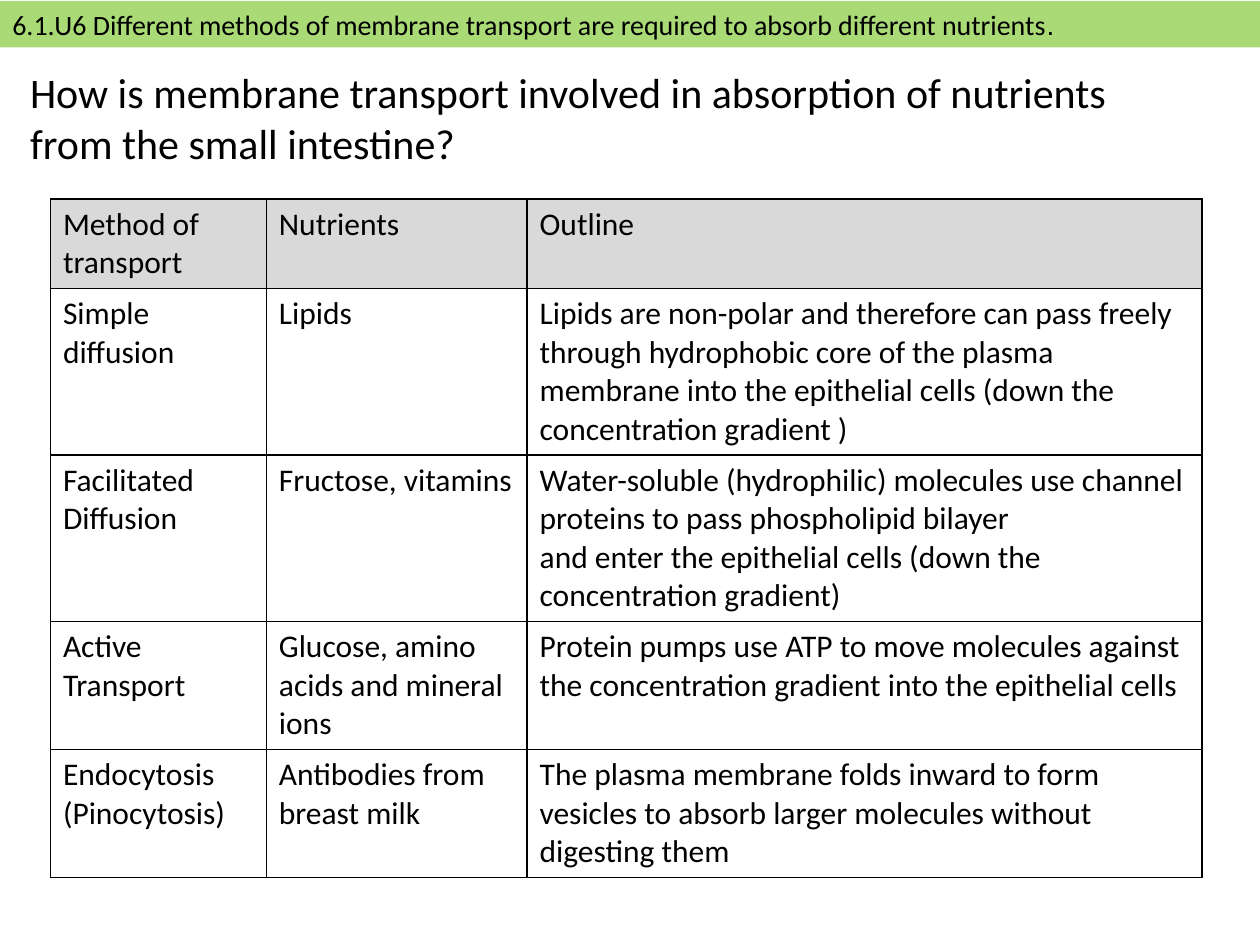
from lxml import etree
from pptx import Presentation
from pptx.dml.color import RGBColor
from pptx.enum import shapes, text
from pptx.oxml import ns
from pptx.util import Pt

STANDARD = ("6.1.U6 Different methods of membrane transport are required "
            "to absorb different nutrients")
QUESTION = "How is membrane transport involved in absorption of nutrients from the small intestine?"
TRANSPORT_ROWS = [
    ("Method of transport", "Nutrients", "Outline"),
    ("Simple diffusion", "Lipids",
     "Lipids are non-polar and therefore can pass freely through hydrophobic core of the "
     "plasma membrane into the epithelial cells (down the concentration gradient )"),
    ("Facilitated Diffusion", "Fructose, vitamins",
     "Water-soluble (hydrophilic) molecules use channel proteins to pass phospholipid bilayer\n"
     "and enter the epithelial cells (down the concentration gradient)"),
    ("Active Transport", "Glucose, amino acids and mineral ions",
     "Protein pumps use ATP to move molecules against the concentration gradient "
     "into the epithelial cells"),
    ("Endocytosis (Pinocytosis)", "Antibodies from breast milk",
     "The plasma membrane folds inward to form vesicles to absorb larger molecules "
     "without digesting them"),
]
COLUMN_WIDTHS = (123.4, 149, 385.7)
ROW_HEIGHTS = (51.2, 95, 95, 73.2, 73.2)
COLORS = {"band": "92D050", "header": "D9D9D9", "cell": "FFFFFF", "ink": "000000"}


def color(name):
    return RGBColor.from_string(COLORS[name])


def format_font(font, size, name="Calibri"):
    font.size, font.name = Pt(size), name
    font.color.rgb = color("ink")


def add_borders(cell):
    """Draw a 1 pt line on every side; borders must precede the cell fill."""
    properties = cell._tc.get_or_add_tcPr()
    for side in ("lnL", "lnR", "lnT", "lnB"):
        line = etree.SubElement(properties, ns.qn(f"a:{side}"), w=str(Pt(1)))
        fill = etree.SubElement(line, ns.qn("a:solidFill"))
        etree.SubElement(fill, ns.qn("a:srgbClr"), val=COLORS["ink"])


def add_band(slide):
    band = slide.shapes.add_shape(shapes.MSO_SHAPE.RECTANGLE, 0, Pt(0.5), Pt(720), Pt(26.6))
    band.shadow.inherit = False
    band.line.fill.background()
    band.fill.solid()
    band.fill.fore_color.rgb = color("band")
    band_color = band.fill._xPr.find(".//" + ns.qn("a:srgbClr"))
    etree.SubElement(band_color, ns.qn("a:alpha"), val="78000")
    band.text_frame.vertical_anchor = text.MSO_ANCHOR.MIDDLE
    paragraph = band.text_frame.paragraphs[0]
    paragraph.alignment = text.PP_ALIGN.LEFT
    for words, font_name in ((STANDARD, "Calibri"), (".", "Arial")):
        run = paragraph.add_run()
        run.text = words
        format_font(run.font, 16, font_name)


def add_question(slide):
    title = slide.shapes.title
    title.left, title.top, title.width, title.height = Pt(10), Pt(34.6), Pt(641.5), Pt(65.5)
    title.text_frame.text = QUESTION
    title.text_frame.word_wrap = True
    title.text_frame.auto_size = text.MSO_AUTO_SIZE.NONE
    title.text_frame.vertical_anchor = text.MSO_ANCHOR.TOP
    paragraph = title.text_frame.paragraphs[0]
    paragraph.alignment = text.PP_ALIGN.LEFT
    format_font(paragraph.font, 24)


def add_transport_table(slide):
    table = slide.shapes.add_table(
        len(TRANSPORT_ROWS), len(COLUMN_WIDTHS), Pt(28.8), Pt(113.6),
        Pt(sum(COLUMN_WIDTHS)), Pt(sum(ROW_HEIGHTS))).table
    table.first_row = table.horz_banding = False
    for column, width in zip(table.columns, COLUMN_WIDTHS):
        column.width = Pt(width)
    for row_index, (row, height) in enumerate(zip(table.rows, ROW_HEIGHTS)):
        row.height = Pt(height)
        for cell, words in zip(row.cells, TRANSPORT_ROWS[row_index]):
            add_borders(cell)
            cell.fill.solid()
            cell.fill.fore_color.rgb = color("cell" if row_index else "header")
            cell.text = words
            for paragraph in cell.text_frame.paragraphs:
                format_font(paragraph.font, 18)


def main():
    presentation = Presentation()
    presentation.slide_width, presentation.slide_height = Pt(720), Pt(540)
    slide = presentation.slides.add_slide(presentation.slide_layouts[5])
    add_band(slide)
    add_transport_table(slide)
    add_question(slide)
    presentation.save("out.pptx")


if __name__ == "__main__":
    main()
